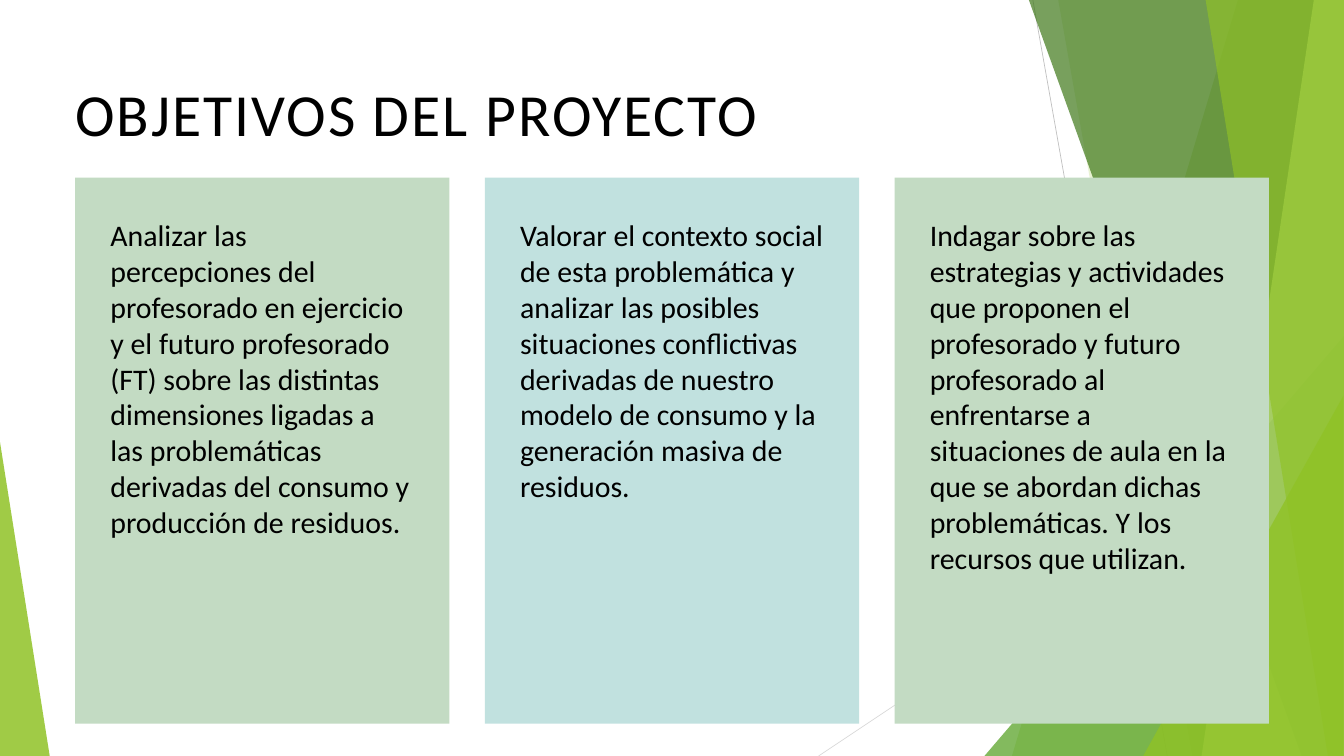
from lxml.etree import SubElement
from pptx import Presentation
from pptx.dml.color import RGBColor
from pptx.enum.shapes import MSO_CONNECTOR, MSO_SHAPE
from pptx.enum.text import MSO_AUTO_SIZE as AutoSize
from pptx.oxml.ns import qn
from pptx.util import Cm, Pt

WIDTH, HEIGHT = 50.8, 28.58
FONT = "Calibri"
BLACK, GREEN = "000000", "90C226"

# Top x, bottom x, colour and opacity (%); each facet runs to the right edge.
BACK_FACETS = [(46.79, 38.25, GREEN, 30), (40, 45.06, GREEN, 20)]
FRONT_FACETS = [
    (38.89, 49.2, "3F7819", 70),
    (49.66, 45.42, "C0E474", 70),
    (45.57, 50.19, GREEN, 65),
]
OBJECTIVES = [
    ("C3DBC3", "Analizar las percepciones del profesorado en ejercicio y el futuro "
     "profesorado (FT) sobre las distintas dimensiones ligadas a las problemáticas "
     "derivadas del consumo y producción de residuos."),
    ("C1E1DF", "Valorar el contexto social de esta problemática y analizar las "
     "posibles situaciones conflictivas derivadas de nuestro modelo de consumo y la "
     "generación masiva de residuos."),
    ("C3DBC3", "Indagar sobre las estrategias y actividades que proponen el "
     "profesorado y futuro profesorado al enfrentarse a situaciones de aula en la "
     "que se abordan dichas problemáticas. Y los recursos que utilizan."),
]


def color(hex_text):
    return RGBColor.from_string(hex_text)


def paint(shape, fill, opacity=100):
    shape.shadow.inherit = False
    shape.line.fill.background()
    shape.fill.solid()
    shape.fill.fore_color.rgb = color(fill)
    if opacity < 100:
        tint = shape.fill._xPr.find(".//" + qn("a:srgbClr"))
        SubElement(tint, qn("a:alpha"), val=str(opacity * 1000))


def add_line(page, start, end, stroke):
    points = [Cm(value) for value in (*start, *end)]
    line = page.shapes.add_connector(MSO_CONNECTOR.STRAIGHT, *points)
    line.line.color.rgb = color(stroke)
    line.line.width = Pt(0.75)
    SubElement(line._element.spPr, qn("a:effectLst"))


def add_facet(page, top_x, bottom_x, fill, opacity):
    """Draw a band from the top to the bottom of the page with a slanted left side."""
    outline = page.shapes.build_freeform(Cm(top_x), 0)
    outline.add_line_segments([
        (Cm(WIDTH), 0), (Cm(WIDTH), Cm(HEIGHT)), (Cm(bottom_x), Cm(HEIGHT)),
    ])
    paint(outline.convert_to_shape(), fill, opacity)


def add_corner(page, left, top, width, apex, fill, opacity):
    """Draw a triangle standing on the bottom edge; apex is 0 for left, 1 for right."""
    corner = page.shapes.add_shape(
        MSO_SHAPE.ISOSCELES_TRIANGLE, Cm(left), Cm(top), Cm(width), Cm(HEIGHT - top))
    corner.adjustments[0] = apex
    paint(corner, fill, opacity)


def add_text(page, text, left, top, width, height, size, line_spacing=None, tracking=0):
    box = page.shapes.add_textbox(Cm(left), Cm(top), Cm(width), Cm(height))
    frame = box.text_frame
    frame.word_wrap = True
    frame.auto_size = AutoSize.SHAPE_TO_FIT_TEXT
    frame.margin_left = frame.margin_right = frame.margin_top = frame.margin_bottom = 0
    para = frame.paragraphs[0]
    if line_spacing:
        para.line_spacing = Pt(line_spacing)
    span = para.add_run()
    span.text = text
    span.font.name = FONT
    span.font.size = Pt(size)
    span.font.color.rgb = color(BLACK)
    if tracking:
        span.font._element.set("spc", str(round(tracking * 100)))


def add_backdrop(page):
    add_line(page, (39.04, 0), (44.12, HEIGHT), "BFBFBF")
    add_line(page, (WIDTH, 15.34), (30.94, HEIGHT), "D9D9D9")
    for facet in BACK_FACETS:
        add_facet(page, *facet)
    add_corner(page, 37.21, 12.7, 13.59, 1, "54A021", 72)
    for facet in FRONT_FACETS:
        add_facet(page, *facet)
    add_corner(page, 43.21, 14.96, 7.57, 1, GREEN, 80)
    add_corner(page, 0, 16.71, 1.88, 0, GREEN, 85)


def add_objective(page, left, top, width, height, fill, text):
    panel = page.shapes.add_shape(
        MSO_SHAPE.RECTANGLE, Cm(left), Cm(top), Cm(width), Cm(height))
    paint(panel, fill)
    side, above = 1.33, 1.48
    add_text(page, text, left + side, top + above, width - 2 * side,
             height - 2 * above, size=32)


def add_objectives(page, left, top, width, height, gap=1.34):
    count = len(OBJECTIVES)
    panel_width = (width - gap * (count - 1)) / count
    for index, (fill, text) in enumerate(OBJECTIVES):
        add_objective(page, left + index * (panel_width + gap), top,
                      panel_width, height, fill, text)


def main():
    deck = Presentation()
    deck.slide_width, deck.slide_height = Cm(WIDTH), Cm(HEIGHT)
    page = deck.slides.add_slide(deck.slide_layouts[6])
    add_backdrop(page)
    add_objectives(page, 2.84, 6.72, 45.12, 20.64)
    add_text(page, "OBJETIVOS DEL PROYECTO", 2.84, 2.67, 34.82, 2.82,
             size=64, line_spacing=83.2, tracking=2.2)
    deck.save("out.pptx")


if __name__ == "__main__":
    main()
